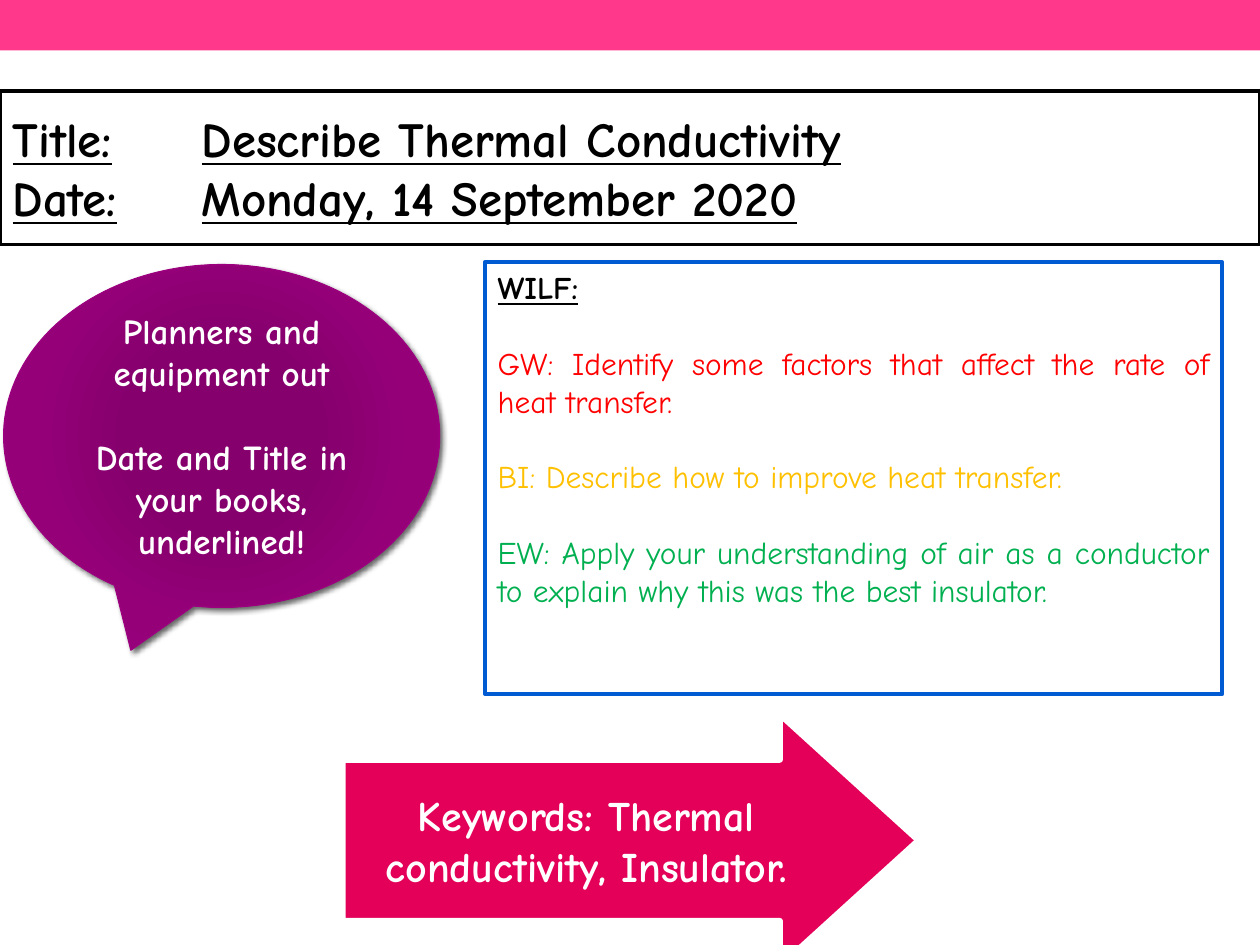
from pptx import Presentation
from pptx.dml.color import RGBColor
from pptx.enum.shapes import MSO_SHAPE
from pptx.enum.text import MSO_ANCHOR, MSO_AUTO_SIZE, PP_ALIGN
from pptx.oxml import parse_xml
from pptx.oxml.ns import nsdecls, qn
from pptx.util import Pt

BLACK = RGBColor(0x00, 0x00, 0x00)
WHITE = RGBColor(0xFF, 0xFF, 0xFF)
PINK = RGBColor(0xFF, 0x38, 0x8C)
ROSE = RGBColor(0xE4, 0x00, 0x59)
BLUE = RGBColor(0x00, 0x5B, 0xD3)
RED = RGBColor(0xFF, 0x00, 0x00)
AMBER = RGBColor(0xFF, 0xC0, 0x00)
GREEN = RGBColor(0x00, 0xB0, 0x50)
PLUM = RGBColor(0x86, 0x00, 0x6D)
GRAPE = RGBColor(0x95, 0x00, 0x79)
PURPLE = RGBColor(0x9C, 0x00, 0x7F)


class Page:
    font = "Comic Neue"

    def __init__(self, slide):
        self.slide = slide

    def place(self, shape, box):
        for name, value in zip(("left", "top", "width", "height"), box):
            setattr(shape, name, Pt(value))

    def paint(self, shape, fill=None, line=None, width=0):
        for part, color in ((shape.fill, fill), (shape.line.fill, line)):
            if color is None:
                part.background()
            else:
                part.solid()
                part.fore_color.rgb = color
        if line is not None:
            shape.line.width = Pt(width)

    def shape(self, kind, box, **paint):
        shape = self.slide.shapes.add_shape(kind, *map(Pt, box))
        shape.shadow.inherit = False
        self.paint(shape, **paint)
        return shape

    def holder(self, index, box, **paint):
        shape = self.slide.placeholders[index]
        self.place(shape, box)
        self.paint(shape, **paint)
        return shape

    def text(self, shape, lines, size, align, gap=0, anchor=MSO_ANCHOR.MIDDLE):
        frame = shape.text_frame
        style = {"word_wrap": True, "auto_size": MSO_AUTO_SIZE.NONE,
                 "vertical_anchor": anchor}
        for name, value in style.items():
            setattr(frame, name, value)
        for index, runs in enumerate(lines):
            para = frame.add_paragraph() if index else frame.paragraphs[0]
            para.alignment = align
            para.space_before = Pt(gap if index else 0)
            for words, color, look in runs:
                run = para.add_run()
                run.text = words
                run.font.color.rgb = color
                form = {"name": self.font, "size": Pt(size), "bold": True, **look}
                for name, value in form.items():
                    setattr(run.font, name, value)

    def plain(self, shape):
        for para in shape.text_frame.paragraphs:
            props = para._p.get_or_add_pPr()
            props.set("marL", "0")
            props.set("indent", "0")
            props.append(parse_xml(f"<a:buNone {nsdecls('a')}/>"))

    def glow(self, shape, stops):
        shape.fill.gradient()
        props = shape._element.spPr
        marks = "".join(
            f'<a:gs pos="{spot * 1000}"><a:srgbClr val="{color}"/></a:gs>'
            for spot, color in stops)
        old = props.find(qn("a:gradFill"))
        props.replace(old, parse_xml(
            f'<a:gradFill {nsdecls("a")} rotWithShape="1"><a:gsLst>{marks}</a:gsLst>'
            '<a:path path="circle"><a:fillToRect l="100000" t="100000" '
            'r="100000" b="100000"/></a:path></a:gradFill>'))

    def shade(self, shape, blur, dist, angle, alpha):
        props = shape._element.spPr
        props.find(qn("a:effectLst")).append(parse_xml(
            f'<a:outerShdw {nsdecls("a")} blurRad="{Pt(blur)}" dist="{Pt(dist)}" '
            f'dir="{angle * 60000}" algn="ctr" rotWithShape="0">'
            f'<a:srgbClr val="{BLACK}"><a:alpha val="{alpha * 1000}"/></a:srgbClr>'
            '</a:outerShdw>'))


def main():
    deck = Presentation()
    deck.slide_width, deck.slide_height = Pt(720), Pt(540)
    page = Page(deck.slides.add_slide(deck.slide_layouts[1]))
    under = {"underline": True}
    light = {"bold": False}

    page.shape(MSO_SHAPE.RECTANGLE, (0, 0, 720, 28.8), fill=PINK)

    title = page.holder(0, (0, 51.84, 720, 87.84), line=BLACK, width=2.08)
    heads = (("Title:", "Describe Thermal Conductivity"),
             ("Date:", "Monday, 14 September 2020"))
    page.text(title, [[(label, BLACK, under), ("\t\t", BLACK, {}),
                       (words, BLACK, under)] for label, words in heads],
              28, PP_ALIGN.LEFT)

    bubble = page.shape(MSO_SHAPE.OVAL_CALLOUT, (2.16, 151.2, 249.12, 195.84),
                        line=PURPLE, width=0.75)
    page.glow(bubble, ((0, PLUM), (34, PLUM), (70, GRAPE), (100, PURPLE)))
    page.shade(bubble, 3, 2, 45, 60)
    page.text(bubble, [[("Planners and equipment out", WHITE, {})],
                       [("Date and Title in your books, underlined!", WHITE, {})]],
              20, PP_ALIGN.CENTER, gap=24)

    arrow = page.shape(MSO_SHAPE.RIGHT_ARROW, (195.84, 408.24, 329.04, 144),
                       fill=ROSE, line=WHITE, width=3.5)
    arrow.adjustments[0], arrow.adjustments[1] = 0.64, 0.55
    page.text(arrow, [[("Keywords: Thermal conductivity, Insulator.", WHITE, {})]],
              24, PP_ALIGN.CENTER)

    goals = page.holder(1, (277.2, 149.76, 421.2, 246.96),
                        fill=WHITE, line=BLUE, width=2.08)
    page.text(goals, [
        [("WILF:", BLACK, under)],
        [("GW: Identify some factors that affect the rate of heat transfer.", RED, light)],
        [("BI: Describe how to improve heat transfer.", AMBER, light)],
        [("EW: Apply your understanding of air as a conductor to explain why "
          "this was the best insulator.", GREEN, light)],
    ], 18, PP_ALIGN.JUSTIFY, gap=21.6, anchor=MSO_ANCHOR.TOP)
    page.plain(goals)

    deck.save("out.pptx")


if __name__ == "__main__":
    main()
